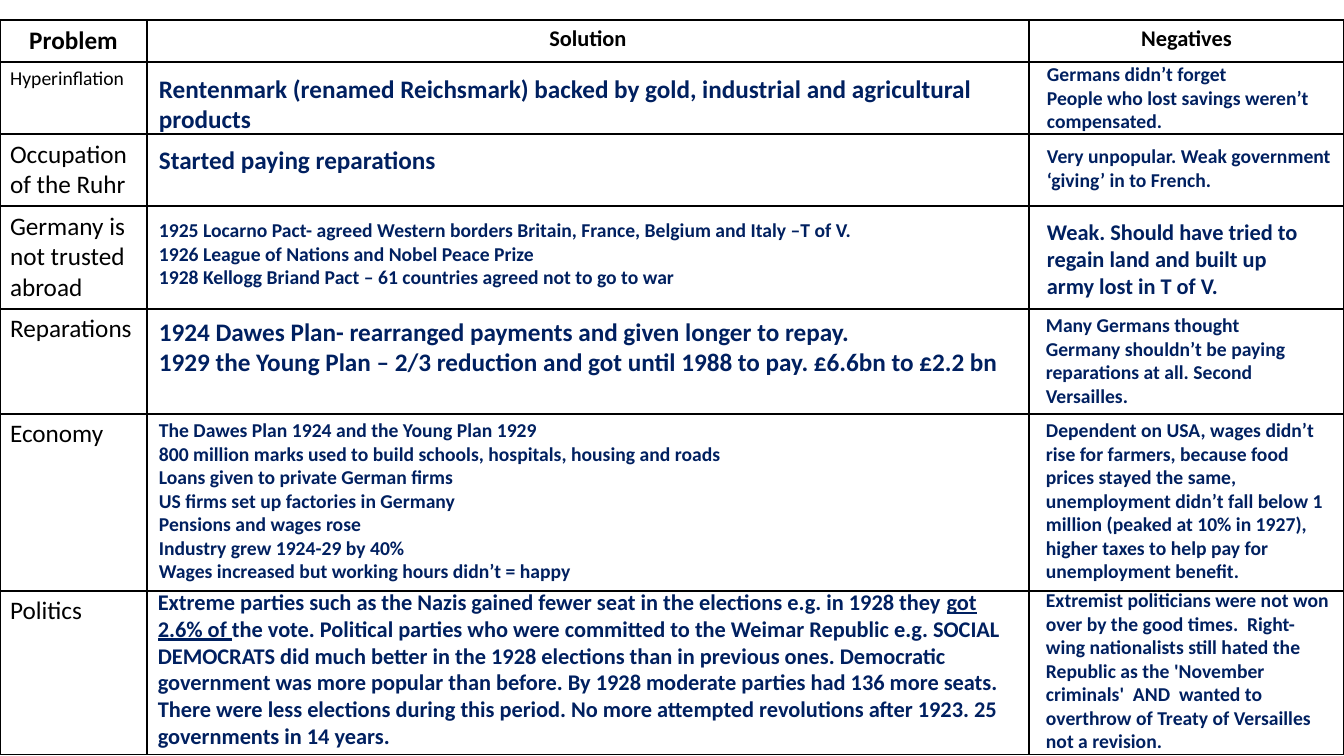
from pptx import Presentation
from pptx.dml.color import RGBColor
from pptx.enum.text import MSO_AUTO_SIZE as AutoSize, PP_ALIGN as Align
from pptx.util import Pt
from lxml.etree import SubElement
from pptx.oxml.ns import qn

WIDTH, HEIGHT = 1344, 756
SCALE = 12192000 / WIDTH
BLACK, NAVY, WHITE = "000000", "002060", "FFFFFF"


def px(length):
    return round(length * SCALE)


def add_text(para, text, size, color, bold):
    """Add runs; parts between underscores are underlined."""
    for index, part in enumerate(text.split("_")):
        span = para.add_run()
        span.text = part
        font = span.font
        font.name, font.size, font.bold = "Calibri", Pt(size), bold
        font.color.rgb = RGBColor.from_string(color)
        if index % 2:
            font.underline = True


deck = Presentation()
deck.slide_width, deck.slide_height = px(WIDTH), px(HEIGHT)
page = deck.slides.add_slide(deck.slide_layouts[6])

# Table grid
column_widths = [147, 882, 315]
row_heights = [42, 72, 72, 103, 105, 177, 164]
frame = page.shapes.add_table(len(row_heights), len(column_widths), 0, px(20),
                              px(sum(column_widths)), px(sum(row_heights)))
table = frame.table
for column, width in zip(table.columns, column_widths):
    column.width = px(width)
for row, height in zip(table.rows, row_heights):
    row.height = px(height)

# Cell borders and fill
for cell in table.iter_cells():
    properties = cell._tc.get_or_add_tcPr()
    for side in ("a:lnL", "a:lnR", "a:lnT", "a:lnB"):
        line = SubElement(properties, qn(side), w=str(Pt(1)))
        SubElement(SubElement(line, qn("a:solidFill")), qn("a:srgbClr"), val=BLACK)
    cell.fill.solid()
    cell.fill.fore_color.rgb = RGBColor.from_string(WHITE)

# Headings
for column, (heading, size) in enumerate([("Problem", 18), ("Solution", 16), ("Negatives", 16)]):
    para = table.cell(0, column).text_frame.paragraphs[0]
    para.alignment = Align.CENTER
    add_text(para, heading, size, BLACK, True)

# Problems
problems = [("Hyperinflation", 14), ("Occupation of the Ruhr", 18),
            ("Germany is not trusted abroad", 18), ("Reparations", 18),
            ("Economy", 18), ("Politics", 18)]
for row, (problem, size) in enumerate(problems, 1):
    add_text(table.cell(row, 0).text_frame.paragraphs[0], problem, size, BLACK, False)

# Solutions and negatives: left, top, width, height, size, paragraphs
notes = [
    (149, 68, 838, 72, 18, [
        "Rentenmark (renamed Reichsmark) backed by gold, industrial and agricultural products"]),
    (1037, 57, 306, 82, 14, [
        "Germans didn’t forget",
        "People who lost savings weren’t compensated."]),
    (149, 139, 814, 40, 18, ["Started paying reparations"]),
    (1037, 139, 306, 59, 14, ["Very unpopular. Weak government ‘giving’ in to French."]),
    (149, 213, 858, 82, 14, [
        "1925 Locarno Pact- agreed Western borders Britain, France, Belgium and Italy –T of V.",
        "1926 League of Nations and Nobel Peace Prize",
        "1928 Kellogg Briand Pact – 61 countries agreed not to go to war"]),
    (1037, 213, 280, 92, 16, [
        "Weak. Should have tried to regain land and built up army lost in T of V."]),
    (149, 311, 868, 72, 18, [
        "1924 Dawes Plan- rearranged payments and given longer to repay.",
        "1929 the Young Plan – 2/3 reduction and got until 1988 to pay. £6.6bn to £2.2 bn"]),
    (1036, 308, 290, 105, 14, [
        "Many Germans thought Germany shouldn’t be paying reparations at all. "
        "Second Versailles."]),
    (149, 413, 868, 176, 14, [
        "The Dawes Plan 1924 and the Young Plan 1929",
        "800 million marks used to build schools, hospitals, housing and roads",
        "Loans given to private German firms",
        "US firms set up factories in Germany",
        "Pensions and wages rose",
        "Industry grew 1924-29 by 40%",
        "Wages increased but working hours didn’t = happy"]),
    (1036, 413, 306, 176, 14, [
        "Dependent on USA, wages didn’t rise for farmers, because food prices stayed the same, "
        "unemployment didn’t fall below 1 million (peaked at 10% in 1927), higher taxes to help "
        "pay for unemployment benefit."]),
    (148, 583, 868, 173, 16, [
        "Extreme parties such as the Nazis gained fewer seat in the elections e.g. in 1928 they "
        "_got 2.6% of _the vote. Political parties who were committed to the Weimar Republic "
        "e.g. SOCIAL DEMOCRATS did much better in the 1928 elections than in previous ones. "
        "Democratic government was more popular than before. By 1928 moderate parties had 136 "
        "more seats. There were less elections during this period. No more attempted "
        "revolutions after 1923. 25 governments in 14 years."]),
    (1036, 583, 306, 176, 14, [
        "Extremist politicians were not won over by the good times.  Right-wing nationalists "
        "still hated the Republic as the 'November criminals'  AND  wanted to overthrow of "
        "Treaty of Versailles not a revision."]),
]
for left, top, width, height, size, lines in notes:
    box = page.shapes.add_textbox(px(left), px(top), px(width), px(height))
    body = box.text_frame
    body.word_wrap = True
    body.auto_size = AutoSize.SHAPE_TO_FIT_TEXT
    for index, line in enumerate(lines):
        para = body.add_paragraph() if index else body.paragraphs[0]
        add_text(para, line, size, NAVY, True)

deck.save("out.pptx")
